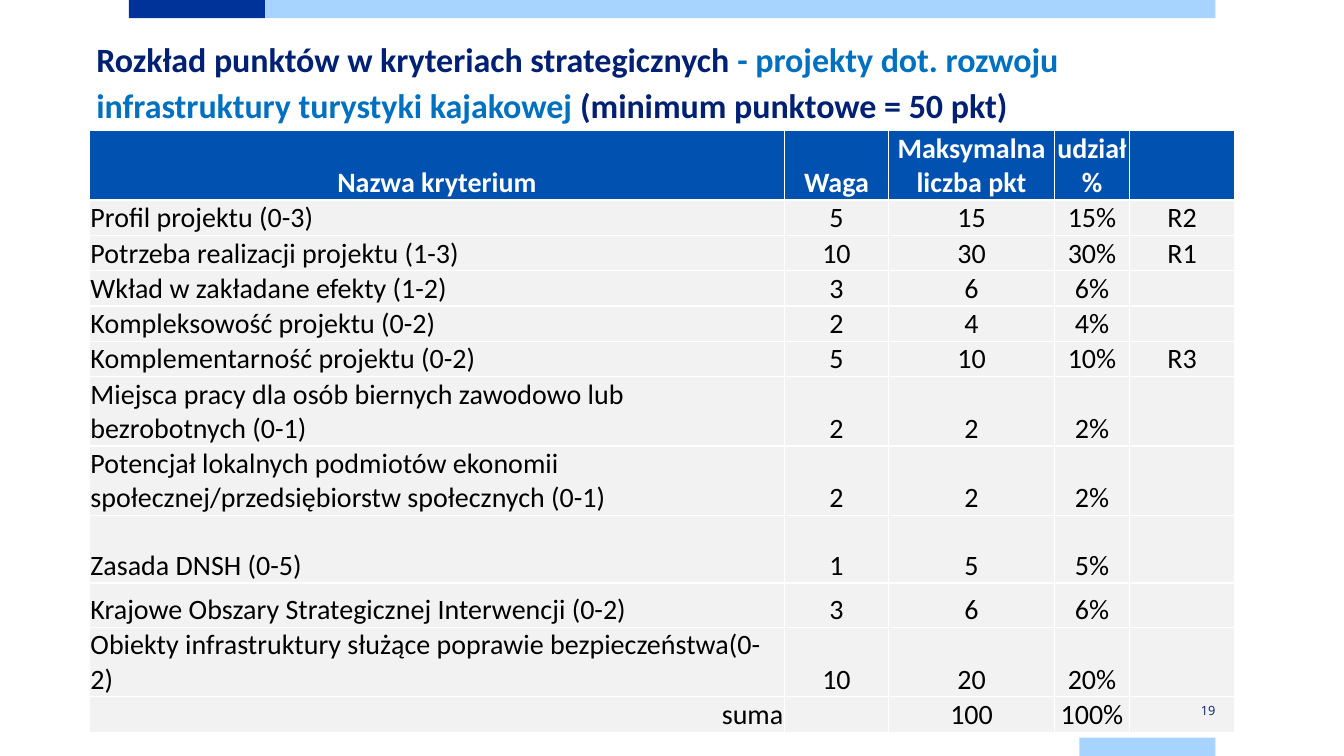
from lxml import etree
from pptx import Presentation
from pptx import util as u
from pptx.dml.color import RGBColor
from pptx.enum import shapes, text
from pptx.oxml.ns import qn

Cm, Pt = u.Cm, u.Pt
HUES = {"navy": "003399", "sky": "A6D3FF", "head": "0051B0", "body": "F2F2F2",
        "ink": "002073", "blue": "0070C0", "white": "FFFFFF", "black": "000000"}

TITLE = [("Rozkład punktów w kryteriach strategicznych ", "ink"),
         ("- projekty dot. rozwoju infrastruktury turystyki kajakowej ", "blue"),
         ("(minimum punktowe = 50 pkt)", "ink")]
PAGE = "19"
BARS = [(3.25, 0, 3.43, "navy"), (6.68, 0, 23.95, "sky"), (27.2, 18.59, 3.43, "sky")]
COLS = [17.5, 2.64, 4.17, 1.9, 2.64]
LINE, PAIR = 0.89, 1.75
ROWS = [
    (1.72, "Nazwa kryterium", "Waga", "Maksymalna liczba pkt", "udział %", ""),
    (LINE, "Profil projektu (0-3)", "5", "15", "15%", "R2"),
    (LINE, "Potrzeba realizacji projektu (1-3)", "10", "30", "30%", "R1"),
    (LINE, "Wkład w zakładane efekty (1-2)", "3", "6", "6%", ""),
    (LINE, "Kompleksowość projektu (0-2)", "2", "4", "4%", ""),
    (LINE, "Komplementarność projektu (0-2)", "5", "10", "10%", "R3"),
    (PAIR, "Miejsca pracy dla osób biernych zawodowo lub bezrobotnych (0-1)",
     "2", "2", "2%", ""),
    (PAIR, "Potencjał lokalnych podmiotów ekonomii społecznej/przedsiębiorstw "
     "społecznych (0-1)", "2", "2", "2%", ""),
    (1.7, "Zasada DNSH (0-5)", "1", "5", "5%", ""),
    (1.12, "Krajowe Obszary Strategicznej Interwencji (0-2)", "3", "6", "6%", ""),
    (LINE, "Obiekty infrastruktury służące poprawie bezpieczeństwa(0-2)",
     "10", "20", "20%", ""),
    (LINE, "suma", "", "100", "100%", ""),
]


def hue(name):
    return RGBColor.from_string(HUES[name])


def paint(fill, name):
    fill.solid()
    fill.fore_color.rgb = hue(name)


def add_run(para, words, size, color, bold=False, face="Calibri"):
    run = para.add_run()
    run.text = words
    font = run.font
    font.name, font.size, font.bold = face, Pt(size), bold
    font.color.rgb = hue(color)


def add_bar(slide, left, top, width, color):
    bar = slide.shapes.add_shape(shapes.MSO_SHAPE.RECTANGLE,
                                 Cm(left), Cm(top), Cm(width), Cm(0.46))
    bar.shadow.inherit = False
    paint(bar.fill, color)
    bar.line.fill.background()


def add_box(slide, *place):
    """Add a wrapping text box without insets; return its frame."""
    frame = slide.shapes.add_textbox(*map(Cm, place)).text_frame
    frame.word_wrap = True
    frame.margin_left = frame.margin_right = 0
    frame.margin_top = frame.margin_bottom = 0
    return frame


def add_edges(cell):
    """Draw white 1 pt lines on all four sides."""
    props = cell._tc.get_or_add_tcPr()
    for side in ("lnL", "lnR", "lnT", "lnB"):
        line = etree.SubElement(props, qn("a:" + side), w=str(Pt(1)))
        fill = etree.SubElement(line, qn("a:solidFill"))
        etree.SubElement(fill, qn("a:srgbClr"), val=HUES["white"])


def fill_cell(cell, words, head, align):
    cell.margin_left = cell.margin_right = cell.margin_top = Cm(0.02)
    cell.margin_bottom = 0
    cell.vertical_anchor = text.MSO_ANCHOR.BOTTOM
    add_edges(cell)
    paint(cell.fill, "head" if head else "body")
    para = cell.text_frame.paragraphs[0]
    para.alignment = align
    if words:
        add_run(para, words, 20, "white" if head else "black", head)


def add_grid(slide):
    high = sum(row[0] for row in ROWS)
    grid = slide.shapes.add_table(len(ROWS), len(COLS), Cm(2.26), Cm(3.29),
                                  Cm(sum(COLS)), Cm(high)).table
    for col, width in zip(grid.columns, COLS):
        col.width = Cm(width)
    last = len(ROWS) - 1
    for r, (height, *cells) in enumerate(ROWS):
        grid.rows[r].height = Cm(height)
        for c, words in enumerate(cells):
            align = text.PP_ALIGN.CENTER
            if c == 0 and r > 0:
                align = text.PP_ALIGN.RIGHT if r == last else text.PP_ALIGN.LEFT
            fill_cell(grid.cell(r, c), words, r == 0, align)


def main():
    deck = Presentation()
    deck.slide_width, deck.slide_height = Cm(33.87), Cm(19.05)
    slide = deck.slides.add_slide(deck.slide_layouts[6])
    for bar in BARS:
        add_bar(slide, *bar)
    add_grid(slide)

    para = add_box(slide, 2.43, 0.84, 28.6, 2.72).paragraphs[0]
    para.line_spacing = Pt(32.7)
    for words, color in TITLE:
        add_run(para, words, 24.3, color, True)

    frame = add_box(slide, 27.2, 17.68, 3.43, 0.46)
    frame.vertical_anchor = text.MSO_ANCHOR.MIDDLE
    para = frame.paragraphs[0]
    para.alignment = text.PP_ALIGN.RIGHT
    add_run(para, PAGE, 9.1, "ink", face="Open Sans")
    deck.save("out.pptx")


if __name__ == "__main__":
    main()
